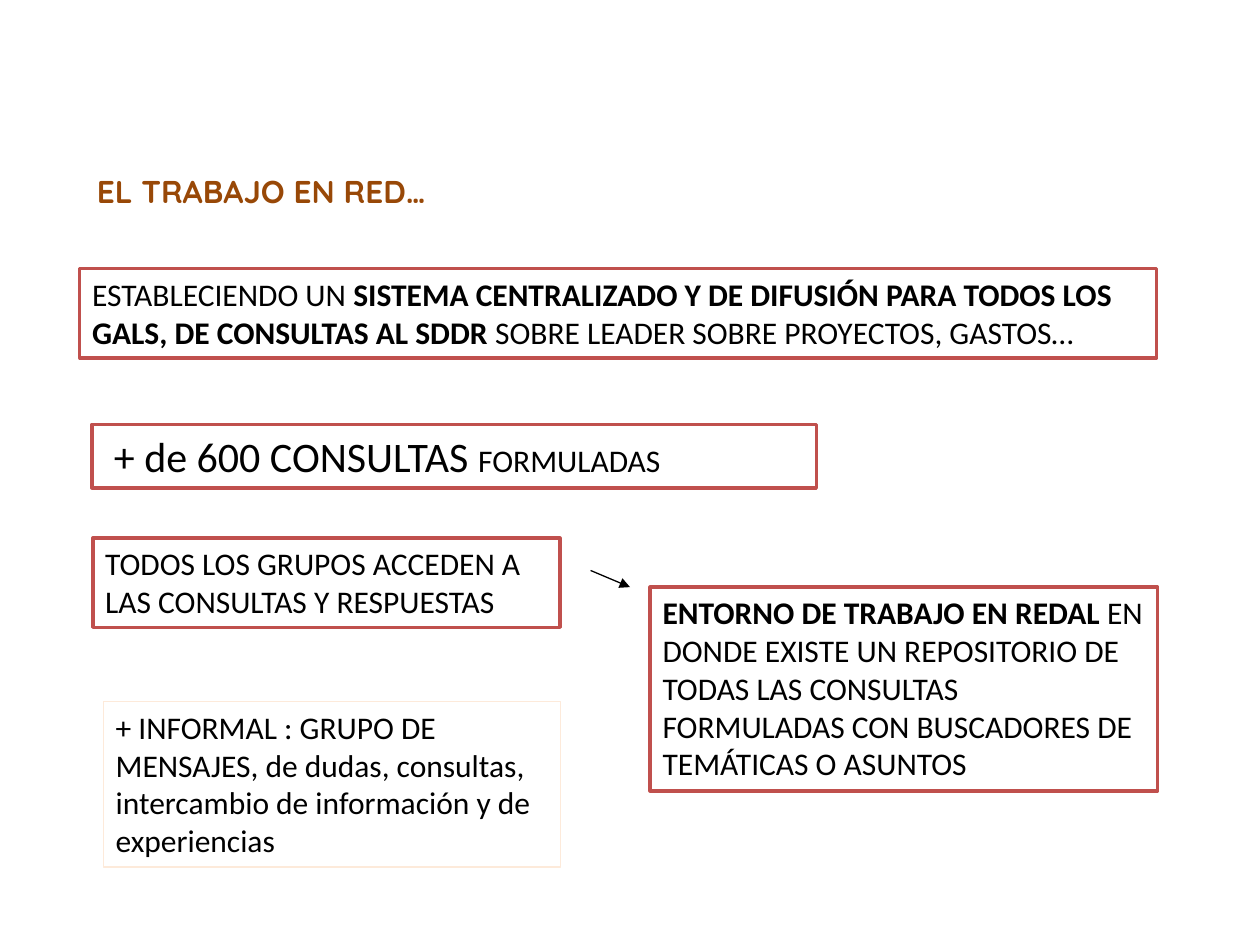
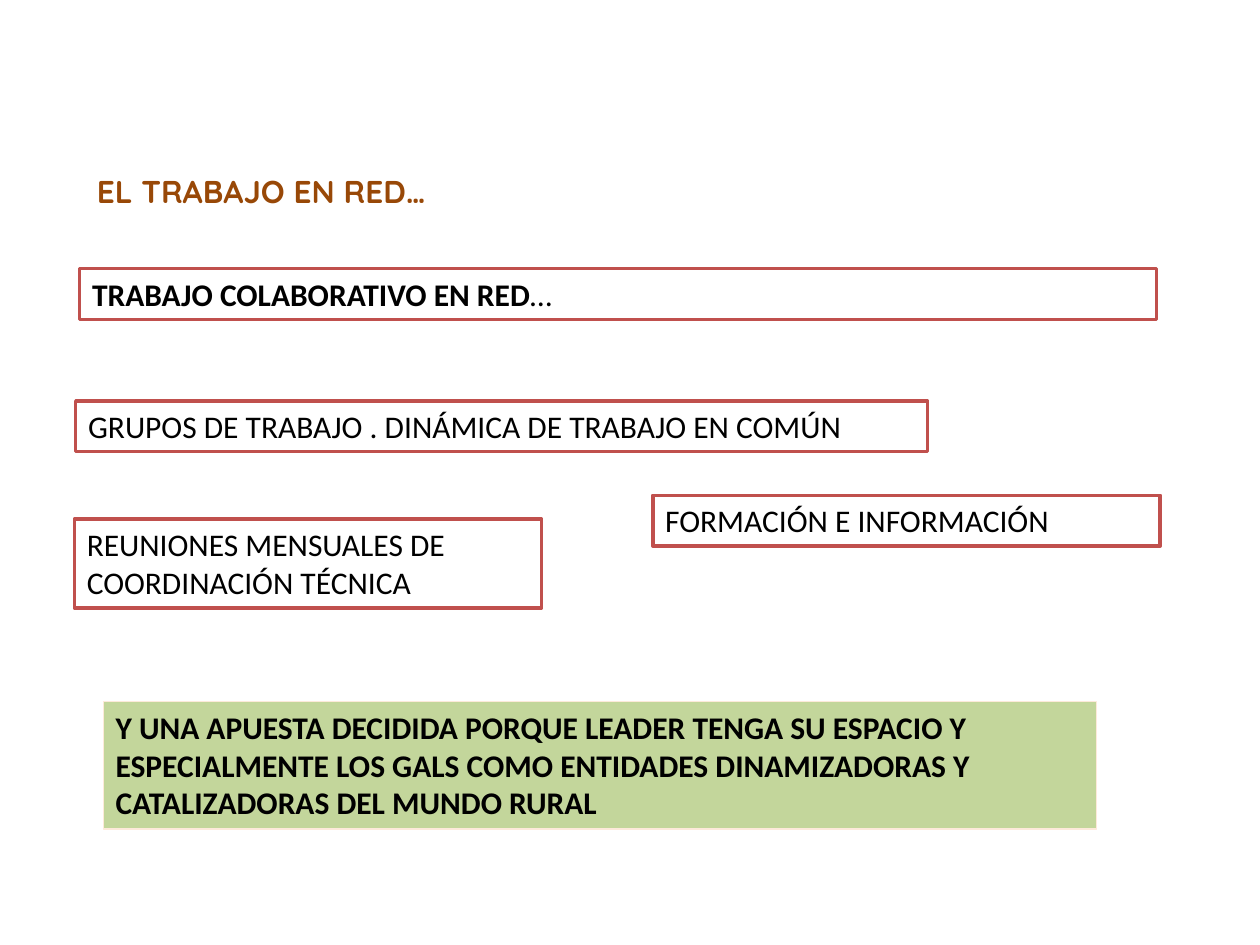
"""Build two slides on networking among local groups."""
from dataclasses import dataclass

from lxml import etree
from pptx import Presentation
from pptx import util as u
from pptx.dml.color import RGBColor
from pptx.enum import shapes, text
from pptx.oxml import ns


@dataclass(frozen=True)
class Theme:
    ink: str = "000000"
    brown: str = "984807"
    red: str = "C0504D"
    cream: str = "FDEADA"
    green: str = "C3D69B"
    white: str = "FFFFFF"
    head: str = "Quicksand"
    body: str = "Calibri"
    size: int = 18
    large: int = 24
    thick: float = 2
    thin: float = 0.75


class Deck:
    def __init__(self, theme):
        self.theme = theme
        self.show = Presentation()
        self.show.slide_width, self.show.slide_height = u.Pt(720), u.Pt(540)
        self.slide = None

    def page(self, title):
        self.slide = self.show.slides.add_slide(self.show.slide_layouts[6])
        spot = map(u.Pt, (48.25, 94.5, 360, 29))
        look = {"name": self.theme.head, "bold": True}
        self.label(self.slide.shapes.add_textbox(*spot), [(title, look)], self.theme.brown)

    def label(self, shape, runs, color, inset=7.2):
        frame = shape.text_frame
        form = {"word_wrap": True, "vertical_anchor": text.MSO_ANCHOR.TOP,
                "auto_size": text.MSO_AUTO_SIZE.SHAPE_TO_FIT_TEXT,
                "margin_left": u.Pt(inset)}
        for key, value in form.items():
            setattr(frame, key, value)
        para = frame.paragraphs[0]
        para.alignment = text.PP_ALIGN.LEFT
        base = {"name": self.theme.body, "size": u.Pt(self.theme.size), "bold": False}
        for words, look in runs:
            run = para.add_run()
            run.text = words
            for key, value in (base | look).items():
                setattr(run.font, key, value)
            run.font.color.rgb = RGBColor.from_string(color)

    def stroke(self, line, color, width):
        line.color.rgb = RGBColor.from_string(color)
        line.width = u.Pt(width)

    def box(self, spot, *runs, fill, edge, width, inset=7.2):
        shape = self.slide.shapes.add_shape(shapes.MSO_SHAPE.RECTANGLE, *map(u.Pt, spot))
        shape.shadow.inherit = False
        if fill:
            shape.fill.solid()
            shape.fill.fore_color.rgb = RGBColor.from_string(fill)
        else:
            shape.fill.background()
        self.stroke(shape.line, edge, width)
        self.label(shape, runs, self.theme.ink, inset)

    def card(self, spot, *runs, **more):
        self.box(spot, *runs, fill=self.theme.white, edge=self.theme.red,
                 width=self.theme.thick, **more)

    def note(self, spot, *runs, fill=None):
        self.box(spot, *runs, fill=fill, edge=self.theme.cream, width=self.theme.thin)

    def arrow(self, *ends):
        line = self.slide.shapes.add_connector(shapes.MSO_CONNECTOR.STRAIGHT, *map(u.Pt, ends))
        self.stroke(line.line, self.theme.ink, self.theme.thin)
        props = line.element.spPr
        etree.SubElement(props.find(ns.qn("a:ln")), ns.qn("a:tailEnd"), type="triangle")
        etree.SubElement(props, ns.qn("a:effectLst"))


def main():
    theme = Theme()
    deck = Deck(theme)
    bold, plain = {"bold": True}, {}
    title = "EL TRABAJO EN RED…"
    left, wide, half, side = 45.5, 615.5, 267, 290
    top, base = 153.5, 401
    one, two = 29, 51

    deck.page(title)
    deck.card((left, top, wide, two), ("ESTABLECIENDO UN ", plain),
              ("SISTEMA CENTRALIZADO Y DE DIFUSIÓN PARA TODOS LOS GALS, "
               "DE CONSULTAS AL SDDR ", bold),
              ("SOBRE LEADER SOBRE PROYECTOS, GASTOS…", plain))
    deck.card((52.5, 242.5, 414, 36.25),
              ("+ de 600 CONSULTAS ", {"size": u.Pt(theme.large)}),
              ("FORMULADAS", plain), inset=12.6)
    deck.card((53, 307.5, half, two),
              ("TODOS LOS GRUPOS ACCEDEN A LAS CONSULTAS Y RESPUESTAS", plain))
    deck.card((371.5, 335.5, side, 116.5), ("ENTORNO DE TRABAJO EN REDAL ", bold),
              ("EN DONDE EXISTE UN REPOSITORIO DE TODAS LAS CONSULTAS "
               "FORMULADAS CON BUSCADORES DE TEMÁTICAS O ASUNTOS", plain))
    deck.note((59, base, 261.5, 94.5),
              ("+ INFORMAL : GRUPO DE MENSAJES, de dudas, consultas, "
               "intercambio de información y de experiencias", plain))
    deck.arrow(337.5, 326, 360, 335.5)

    deck.page(title)
    deck.card((left, top, wide, one), ("TRABAJO COLABORATIVO EN RED", bold), ("…", plain))
    deck.card((43.25, 229, 486.75, one),
              ("GRUPOS DE TRABAJO . DINÁMICA DE TRABAJO EN COMÚN", plain))
    deck.card((42.5, 296.5, half, two),
              ("REUNIONES MENSUALES DE COORDINACIÓN TÉCNICA", plain))
    deck.card((373, 283, side, one), ("FORMACIÓN E INFORMACIÓN", plain))
    deck.note((59, base, 567.5, 72.75),
              ("Y UNA APUESTA DECIDIDA PORQUE LEADER TENGA SU ESPACIO Y "
               "ESPECIALMENTE LOS GALS COMO ENTIDADES DINAMIZADORAS Y "
               "CATALIZADORAS DEL MUNDO RURAL", bold), fill=theme.green)
    deck.show.save("out.pptx")


if __name__ == "__main__":
    main()
